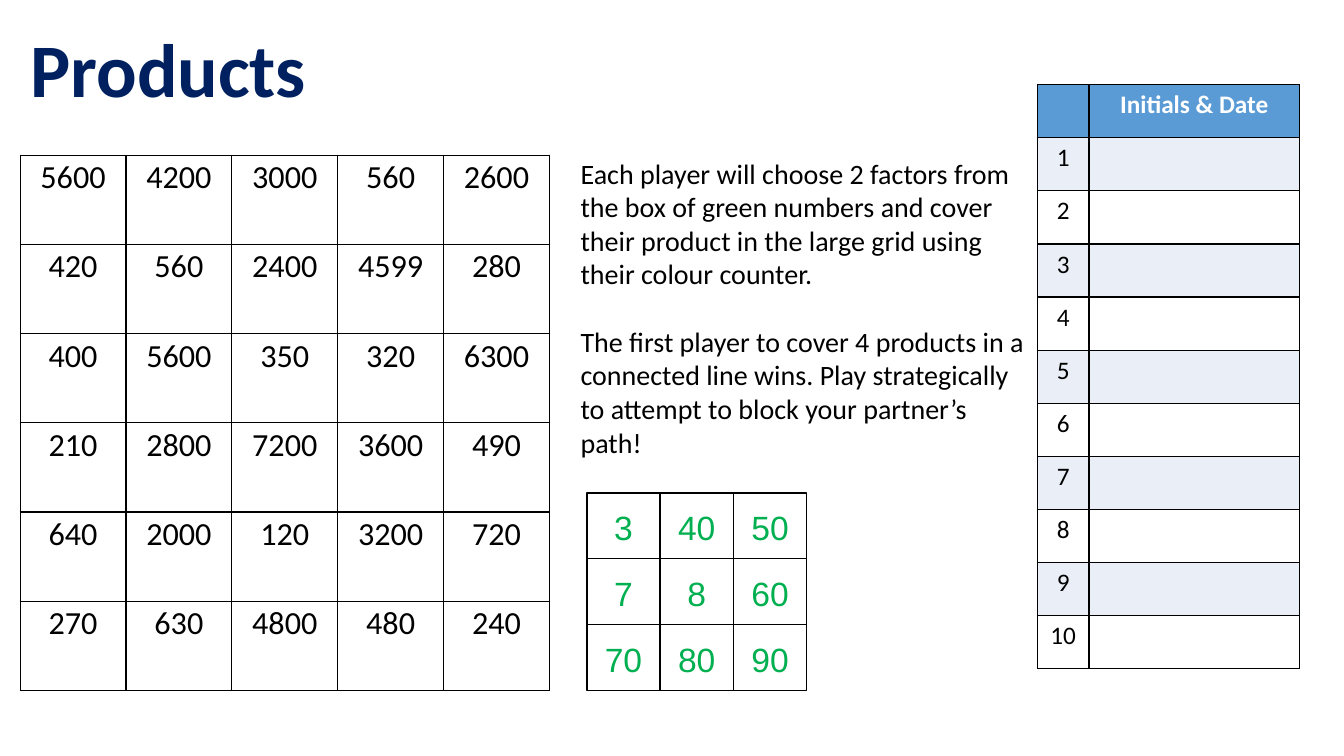
from lxml.etree import SubElement
from pptx import Presentation
from pptx.dml.color import RGBColor
from pptx.enum.shapes import MSO_SHAPE
from pptx.enum.text import MSO_ANCHOR, PP_ALIGN
from pptx.oxml.ns import qn
from pptx.util import Inches, Pt

BLACK, WHITE, NAVY, GREEN = "000000", "FFFFFF", "002060", "00B050"
HEADER_BLUE, BAND_BLUE = "5B9BD5", "EAEFF7"

PRODUCTS = [
    [5600, 4200, 3000, 560, 2600],
    [420, 560, 2400, 4599, 280],
    [400, 5600, 350, 320, 6300],
    [210, 2800, 7200, 3600, 490],
    [640, 2000, 120, 3200, 720],
    [270, 630, 4800, 480, 240],
]
FACTORS = [[3, 40, 50], [7, 8, 60], [70, 80, 90]]
RULES = [
    "Each player will choose 2 factors from the box of green numbers and "
    "cover their product in the large grid using their colour counter.",
    "The first player to cover 4 products in a connected line wins. "
    "Play strategically to attempt to block your partner’s path!",
]


def rgb(value):
    return RGBColor.from_string(value)


def write(p, text, size, color=BLACK, font="Calibri", bold=False, **layout):
    """Put text in a paragraph; layout holds paragraph attributes."""
    for name, value in layout.items():
        setattr(p, name, value)
    r = p.add_run()
    r.text = str(text)
    for name, value in {"size": Pt(size), "name": font, "bold": bold}.items():
        setattr(r.font, name, value)
    r.font.color.rgb = rgb(color)


def style_cell(cell, fill):
    """Give a cell black one-point borders and a solid fill."""
    tcPr = cell._tc.get_or_add_tcPr()
    for side in ("a:lnL", "a:lnR", "a:lnT", "a:lnB"):
        ln = SubElement(tcPr, qn(side), w=str(Pt(1)))
        SubElement(SubElement(ln, qn("a:solidFill")), qn("a:srgbClr"), val=BLACK)
    cell.fill.solid()
    cell.fill.fore_color.rgb = rgb(fill)


def add_grid(s, left, top, col_widths, row_height, row_count):
    table = s.shapes.add_table(
        row_count, len(col_widths), Inches(left), Inches(top),
        Inches(sum(col_widths)), Inches(row_height * row_count)).table
    table.first_row = table.horz_banding = False
    for column, width in zip(table.columns, col_widths):
        column.width = Inches(width)
    for row in table.rows:
        row.height = Inches(row_height)
    return table


def add_products(s):
    table = add_grid(s, 0.2, 1.54, [1.05] * 5, 0.885, len(PRODUCTS))
    margins = {"margin_left": Inches(0.05), "margin_right": Inches(0.05),
               "margin_top": 0, "margin_bottom": 0}
    for i, row in enumerate(PRODUCTS):
        for j, product in enumerate(row):
            cell = table.cell(i, j)
            for name, value in margins.items():
                setattr(cell, name, value)
            style_cell(cell, WHITE)
            write(cell.text_frame.paragraphs[0], product, 23,
                  alignment=PP_ALIGN.CENTER, line_spacing=1.07)


def add_score_sheet(s):
    table = add_grid(s, 10.29, 0.84, [0.51, 2.09], 0.527, 11)
    for i in range(11):
        fill = HEADER_BLUE if i == 0 else BAND_BLUE if i % 2 else WHITE
        for j in range(2):
            style_cell(table.cell(i, j), fill)
        if i:
            write(table.cell(i, 0).text_frame.paragraphs[0], i, 18,
                  alignment=PP_ALIGN.CENTER)
    write(table.cell(0, 1).text_frame.paragraphs[0], "Initials & Date", 18,
          WHITE, bold=True, alignment=PP_ALIGN.CENTER)


def add_factors(s):
    width, height = 0.727, 0.653
    group = s.shapes.add_group_shape()
    for i, row in enumerate(FACTORS):
        for j, factor in enumerate(row):
            sp = group.shapes.add_shape(
                MSO_SHAPE.RECTANGLE, Inches(5.82 + j * width),
                Inches(4.89 + i * height), Inches(width), Inches(height))
            sp.shadow.inherit = False
            sp.fill.background()
            sp.line.color.rgb = rgb(BLACK)
            sp.line.width = Pt(1)
            tf = sp.text_frame
            tf.vertical_anchor = MSO_ANCHOR.MIDDLE
            write(tf.paragraphs[0], factor, 24, GREEN, "Arial",
                  alignment=PP_ALIGN.CENTER, line_spacing=1.07, space_after=Pt(8))


def add_rules(s):
    tf = s.shapes.add_textbox(Inches(5.66), Inches(1.5),
                              Inches(4.63), Inches(3.13)).text_frame
    tf.word_wrap = True
    write(tf.paragraphs[0], RULES[0], 20)
    write(tf.add_paragraph(), RULES[1], 20, space_before=Pt(24))


def add_title(s):
    sp = s.shapes.title
    place = {"left": 0.2, "top": 0.17, "width": 5.4, "height": 1.01}
    for name, value in place.items():
        setattr(sp, name, Inches(value))
    tf = sp.text_frame
    tf.vertical_anchor = MSO_ANCHOR.TOP
    write(tf.paragraphs[0], "Products", 54, NAVY, bold=True,
          alignment=PP_ALIGN.LEFT)


def main():
    prs = Presentation()
    prs.slide_width, prs.slide_height = Inches(13.33), Inches(7.5)
    s = prs.slides.add_slide(prs.slide_layouts[5])
    add_products(s)
    add_factors(s)
    add_rules(s)
    add_score_sheet(s)
    add_title(s)
    prs.save("out.pptx")


if __name__ == "__main__":
    main()
